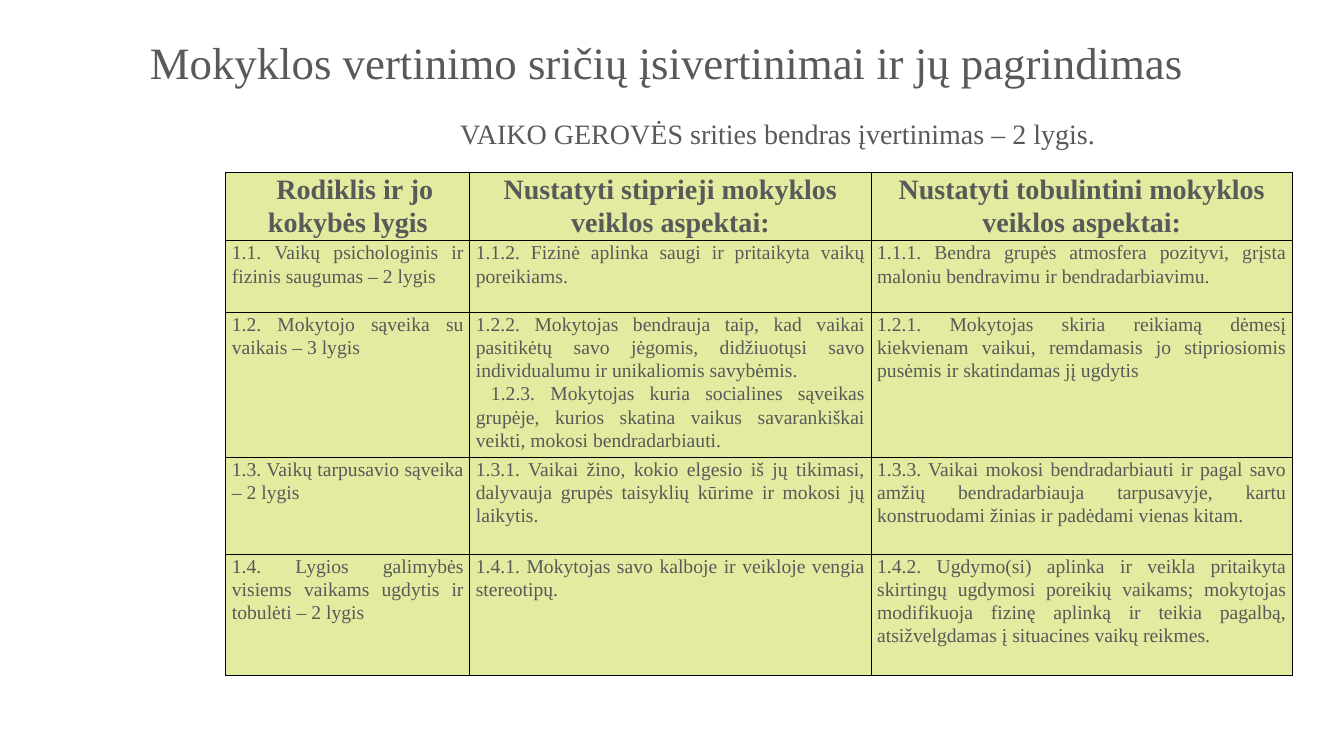
from dataclasses import dataclass

from lxml import etree
from pptx import Presentation
from pptx.dml.color import RGBColor
from pptx.enum.text import MSO_ANCHOR, MSO_AUTO_SIZE, PP_ALIGN
from pptx.oxml.ns import qn
from pptx.util import Pt

CENTER, JUSTIFY = PP_ALIGN.CENTER, PP_ALIGN.JUSTIFY
BOTTOM, TOP = MSO_ANCHOR.BOTTOM, MSO_ANCHOR.TOP
NO_FIT = MSO_AUTO_SIZE.NONE
TITLE_ONLY = 5
PX = 9144  # 100 px to the inch


@dataclass(frozen=True)
class Theme:
    font: str = "Times New Roman"
    text: str = "595959"
    cell: str = "E2EBA0"
    border: str = "000000"
    title_size: int = 32
    heading_size: int = 20
    body_size: int = 14
    title_spacing: float = 0.9
    cell_spacing: float = 1.07
    border_width: int = 1


class SlideBuilder:
    def __init__(self, prs, theme):
        self.theme = theme
        self.s = prs.slides.add_slide(prs.slide_layouts[TITLE_ONLY])

    def style(self, p, size, align, spacing, bold=False, indent=0):
        if indent:
            p._p.get_or_add_pPr().set("indent", str(indent * PX))
        p.alignment, p.line_spacing = align, spacing
        font = p.font
        font.name, font.size, font.bold = self.theme.font, Pt(size), bold
        font.color.rgb = RGBColor.from_string(self.theme.text)

    def line_of_text(self, sp, text, size, anchor):
        tf = sp.text_frame
        tf.text = text
        tf.word_wrap, tf.auto_size, tf.vertical_anchor = True, NO_FIT, anchor
        self.style(tf.paragraphs[0], size, CENTER, self.theme.title_spacing)

    def title(self, text, x, y, w, h):
        sp = self.s.shapes.title
        sp.left, sp.top, sp.width, sp.height = (v * PX for v in (x, y, w, h))
        self.line_of_text(sp, text, self.theme.title_size, BOTTOM)

    def subtitle(self, text, x, y, w, h):
        sp = self.s.shapes.add_textbox(*(v * PX for v in (x, y, w, h)))
        self.line_of_text(sp, text, self.theme.heading_size, TOP)

    def borders(self, cell):
        tc_pr = cell._tc.get_or_add_tcPr()
        for position, side in enumerate(("lnL", "lnR", "lnT", "lnB")):
            ln = etree.Element(qn(f"a:{side}"), w=str(Pt(self.theme.border_width)))
            fill = etree.SubElement(ln, qn("a:solidFill"))
            etree.SubElement(fill, qn("a:srgbClr"), val=self.theme.border)
            tc_pr.insert(position, ln)

    def cell(self, cell, paragraphs, header, indents):
        """Fill one table cell; indents maps a paragraph to its first-line indent."""
        theme = self.theme
        cell.margin_left = cell.margin_right = 6 * PX
        cell.margin_top = cell.margin_bottom = 0
        cell.fill.solid()
        cell.fill.fore_color.rgb = RGBColor.from_string(theme.cell)
        self.borders(cell)
        cell.text = "\n".join(paragraphs)
        size = theme.heading_size if header else theme.body_size
        align = CENTER if header else JUSTIFY
        for p in cell.text_frame.paragraphs:
            self.style(p, size, align, theme.cell_spacing, header, indents.get(p.text, 0))

    def table(self, rows, x, y, widths, heights, indents):
        frame = self.s.shapes.add_table(
            len(rows), len(widths), x * PX, y * PX, sum(widths) * PX, sum(heights) * PX)
        table = frame.table
        for column, width in zip(table.columns, widths):
            column.width = width * PX
        for row, height in zip(table.rows, heights):
            row.height = height * PX
        for r, row in enumerate(rows):
            for c, paragraphs in enumerate(row):
                self.cell(table.cell(r, c), paragraphs, r == 0, indents)


INDICATOR_HEADING = "Rodiklis ir jo kokybės lygis"
SOCIAL_ASPECT = ("1.2.3. Mokytojas kuria socialines sąveikas grupėje, kurios skatina "
                 "vaikus savarankiškai veikti, mokosi bendradarbiauti.")
WELFARE_ROWS = [
    [[INDICATOR_HEADING],
     ["Nustatyti stiprieji mokyklos veiklos aspektai:"],
     ["Nustatyti tobulintini mokyklos veiklos aspektai:"]],
    [["1.1. Vaikų psichologinis ir fizinis saugumas – 2 lygis"],
     ["1.1.2. Fizinė aplinka saugi ir pritaikyta vaikų poreikiams."],
     ["1.1.1. Bendra grupės atmosfera pozityvi, grįsta maloniu bendravimu "
      "ir bendradarbiavimu."]],
    [["1.2. Mokytojo sąveika su vaikais – 3 lygis"],
     ["1.2.2. Mokytojas bendrauja taip, kad vaikai pasitikėtų savo jėgomis, "
      "didžiuotųsi savo individualumu ir unikaliomis savybėmis.",
      SOCIAL_ASPECT],
     ["1.2.1. Mokytojas skiria reikiamą dėmesį kiekvienam vaikui, remdamasis "
      "jo stipriosiomis pusėmis ir skatindamas jį ugdytis"]],
    [["1.3. Vaikų tarpusavio sąveika – 2 lygis"],
     ["1.3.1. Vaikai žino, kokio elgesio iš jų tikimasi, dalyvauja grupės "
      "taisyklių kūrime ir mokosi jų laikytis."],
     ["1.3.3. Vaikai mokosi bendradarbiauti ir pagal savo amžių bendradarbiauja "
      "tarpusavyje, kartu konstruodami žinias ir padėdami vienas kitam."]],
    [["1.4. Lygios galimybės visiems vaikams ugdytis ir tobulėti – 2 lygis"],
     ["1.4.1. Mokytojas savo kalboje ir veikloje vengia stereotipų."],
     ["1.4.2. Ugdymo(si) aplinka ir veikla pritaikyta skirtingų ugdymosi poreikių "
      "vaikams; mokytojas modifikuoja fizinę aplinką ir teikia pagalbą, "
      "atsižvelgdamas į situacines vaikų reikmes."]],
]


def main():
    prs = Presentation()
    prs.slide_width, prs.slide_height = 1333 * PX, 750 * PX
    slide = SlideBuilder(prs, Theme())
    slide.title("Mokyklos vertinimo sričių įsivertinimai ir jų pagrindimas", 56, 33, 1211, 61)
    slide.subtitle("VAIKO GEROVĖS srities bendras įvertinimas – 2 lygis.", 277, 114, 989, 49)
    slide.table(WELFARE_ROWS, 224, 171, widths=[242, 398, 418],
                heights=[68, 71, 144, 96, 120],
                indents={INDICATOR_HEADING: 14, SOCIAL_ASPECT: 15})
    prs.save("out.pptx")


if __name__ == "__main__":
    main()
